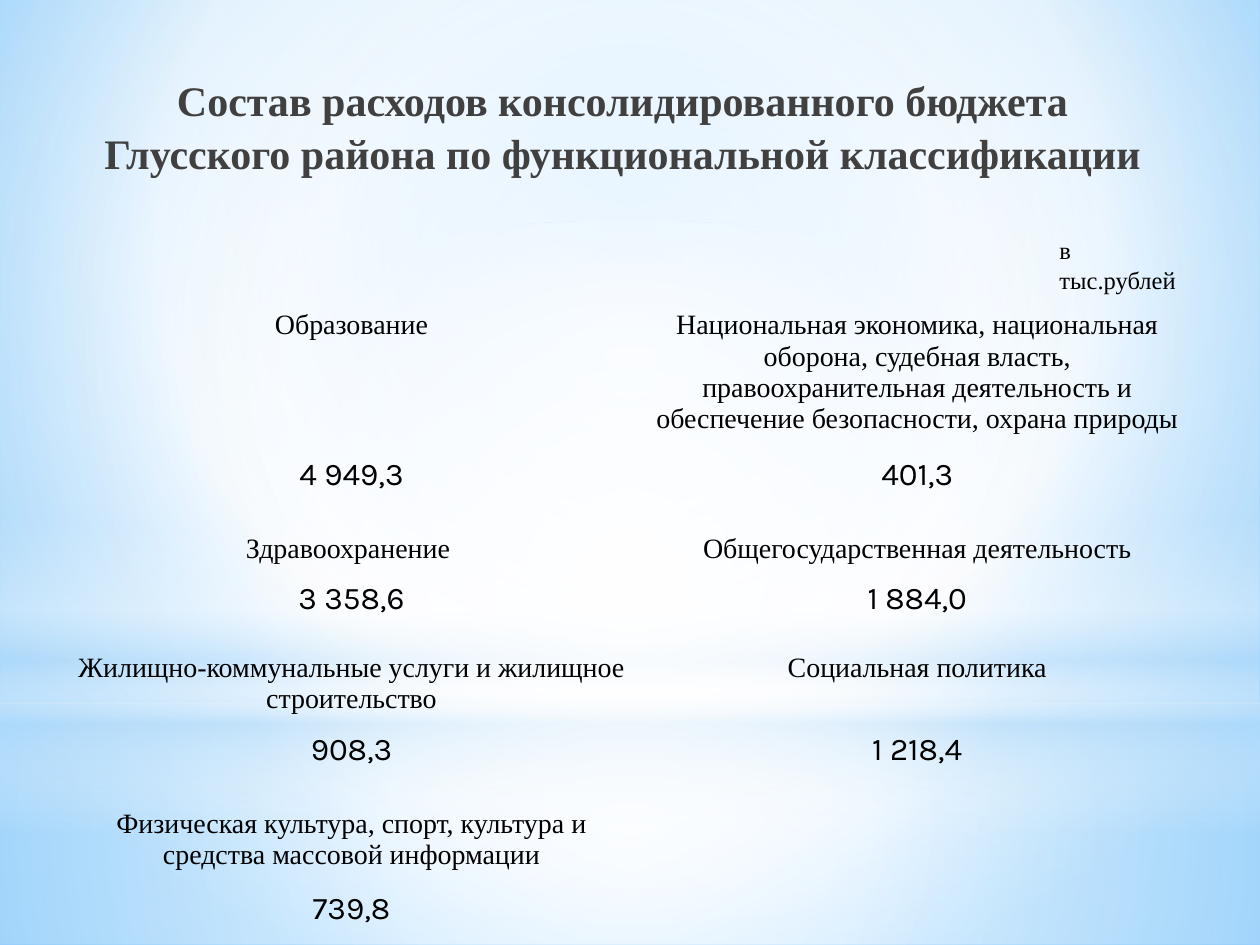
from typing import NamedTuple

from lxml import etree
from pptx import Presentation
from pptx.dml.color import RGBColor
from pptx.enum import shapes, text
from pptx.oxml import ns
from pptx.util import Inches, Pt

BLACK = RGBColor(0x00, 0x00, 0x00)
GRAPHITE = RGBColor(0x40, 0x40, 0x40)
WHITE = RGBColor(0xFF, 0xFF, 0xFF)
PALE_BLUE = RGBColor(0xB4, 0xDC, 0xFA)
SKY = RGBColor(0x9E, 0xD5, 0xFF)
AZURE = RGBColor(0x5B, 0xB9, 0xFF)
SERIF = "Times New Roman"
SANS = "Karla"
PLAIN_TABLE = "{2D5ABB26-0587-4C30-8999-92F81FD0307C}"
CENTRE = (50, 50, 50, 50)


class Stop(NamedTuple):
    position: int
    color: RGBColor
    alpha: int = 100


class Glow(NamedTuple):
    kind: shapes.MSO_SHAPE
    top: float
    height: float
    stops: list[Stop]
    focus: tuple[int, ...] | None = CENTRE


class Expense(NamedTuple):
    name: str
    amount: str


GLOWS = [
    Glow(shapes.MSO_SHAPE.RECTANGLE, 5.58, 1.92,
         [Stop(0, WHITE, 91), Stop(37, WHITE, 76), Stop(100, PALE_BLUE, 79)]),
    Glow(shapes.MSO_SHAPE.RECTANGLE, 0, 5.58,
         [Stop(0, WHITE, 89), Stop(48, WHITE, 62), Stop(100, PALE_BLUE, 79)]),
    Glow(shapes.MSO_SHAPE.RECTANGLE, 4.12, 2.5,
         [Stop(0, WHITE, 0), Stop(29, WHITE, 30), Stop(45, PALE_BLUE, 40),
          Stop(55, WHITE, 26), Stop(65, PALE_BLUE, 60), Stop(100, WHITE, 0)], None),
    Glow(shapes.MSO_SHAPE.OVAL, 1.75, 5.58, [Stop(0, WHITE), Stop(56, WHITE, 0)]),
]
COLUMN_WIDTHS = [4.56, 4.42]
ROW_HEIGHTS = [0.41, 0.61, 0.37, 0.57, 0.57, 0.61, 0.65, 0.65]
EXPENSES = [
    [Expense("Образование", "4 949,3"),
     Expense("Здравоохранение ", "3 358,6"),
     Expense("Жилищно-коммунальные услуги и жилищное строительство", "908,3"),
     Expense("Физическая культура, спорт, культура и средства массовой информации", "739,8")],
    [Expense("Национальная экономика, национальная оборона, судебная власть, "
             "правоохранительная деятельность и обеспечение безопасности, охрана природы", "401,3"),
     Expense("Общегосударственная деятельность", "1 884,0"),
     Expense("Социальная политика", "1 218,4")],
]


def set_gradient(fill, owner, stops: list[Stop], focus: tuple[int, ...] | None) -> None:
    fill.gradient()
    gradient = owner.xpath(".//a:gradFill")[0]
    for child in list(gradient):
        gradient.remove(child)
    stop_list = etree.SubElement(gradient, ns.qn("a:gsLst"))
    for stop in stops:
        node = etree.SubElement(stop_list, ns.qn("a:gs"), pos=str(stop.position * 1000))
        color = etree.SubElement(node, ns.qn("a:srgbClr"), val=str(stop.color))
        if stop.alpha < 100:
            etree.SubElement(color, ns.qn("a:alpha"), val=str(stop.alpha * 1000))
    if focus is None:
        etree.SubElement(gradient, ns.qn("a:lin"), ang="5400000", scaled="0")
    else:
        radial = etree.SubElement(gradient, ns.qn("a:path"), path="circle")
        edges = {side: str(share * 1000) for side, share in zip("ltrb", focus)}
        etree.SubElement(radial, ns.qn("a:fillToRect"), **edges)


def add_glow(page, glow: Glow) -> None:
    shape = page.shapes.add_shape(glow.kind, 0, Inches(glow.top), Inches(10), Inches(glow.height))
    shape.shadow.inherit = False
    shape.line.fill.background()
    set_gradient(shape.fill, shape._element, glow.stops, glow.focus)


def write(frame, content: str, *, size: int, font: str = SERIF, color: RGBColor = BLACK,
          bold: bool = False, align=text.PP_ALIGN.CENTER, spacing: float = 1.0) -> None:
    para = frame.paragraphs[0]
    para.alignment = align
    para.line_spacing = spacing
    span = para.add_run()
    span.text = content
    span.font.size = Pt(size)
    span.font.name = font
    span.font.bold = bold
    span.font.color.rgb = color


def add_text(page, left: float, top: float, width: float, height: float,
             content: str, *, wrap: bool = True, **style) -> None:
    box = page.shapes.add_textbox(Inches(left), Inches(top), Inches(width), Inches(height))
    box.text_frame.word_wrap = wrap
    write(box.text_frame, content, **style)


def add_expense_table(page) -> None:
    frame = page.shapes.add_table(len(ROW_HEIGHTS), len(COLUMN_WIDTHS), Inches(0.51), Inches(2.41),
                                  Inches(sum(COLUMN_WIDTHS)), Inches(sum(ROW_HEIGHTS)))
    table = frame.table
    table.first_row = table.horz_banding = False
    table._tbl.tblPr.find(ns.qn("a:tableStyleId")).text = PLAIN_TABLE
    for row, height in zip(table.rows, ROW_HEIGHTS):
        row.height = Inches(height)
    for column, width in zip(table.columns, COLUMN_WIDTHS):
        column.width = Inches(width)
    for cell in table.iter_cells():
        cell.fill.background()
    for column, expenses in enumerate(EXPENSES):
        for index, expense in enumerate(expenses):
            write(table.cell(2 * index, column).text_frame, expense.name, size=16)
            write(table.cell(2 * index + 1, column).text_frame, expense.amount, size=18, font=SANS)


def main() -> None:
    deck = Presentation()
    deck.slide_width, deck.slide_height = Inches(10), Inches(7.5)
    page = deck.slides.add_slide(deck.slide_layouts[6])
    set_gradient(page.background.fill, page._element,
                 [Stop(0, SKY), Stop(60, WHITE), Stop(100, AZURE)], (20, 10, 20, 60))
    for glow in GLOWS:
        add_glow(page, glow)
    add_text(page, 0.53, 0.52, 8.82, 1.02,
             "Состав расходов консолидированного бюджета Глусского района "
             "по функциональной классификации",
             size=24, color=GRAPHITE, bold=True, spacing=1.05)
    add_expense_table(page)
    add_text(page, 8.31, 1.82, 1.18, 0.36, "в тыс.рублей", wrap=False, size=14,
             align=text.PP_ALIGN.LEFT)
    deck.save("out.pptx")


if __name__ == "__main__":
    main()
